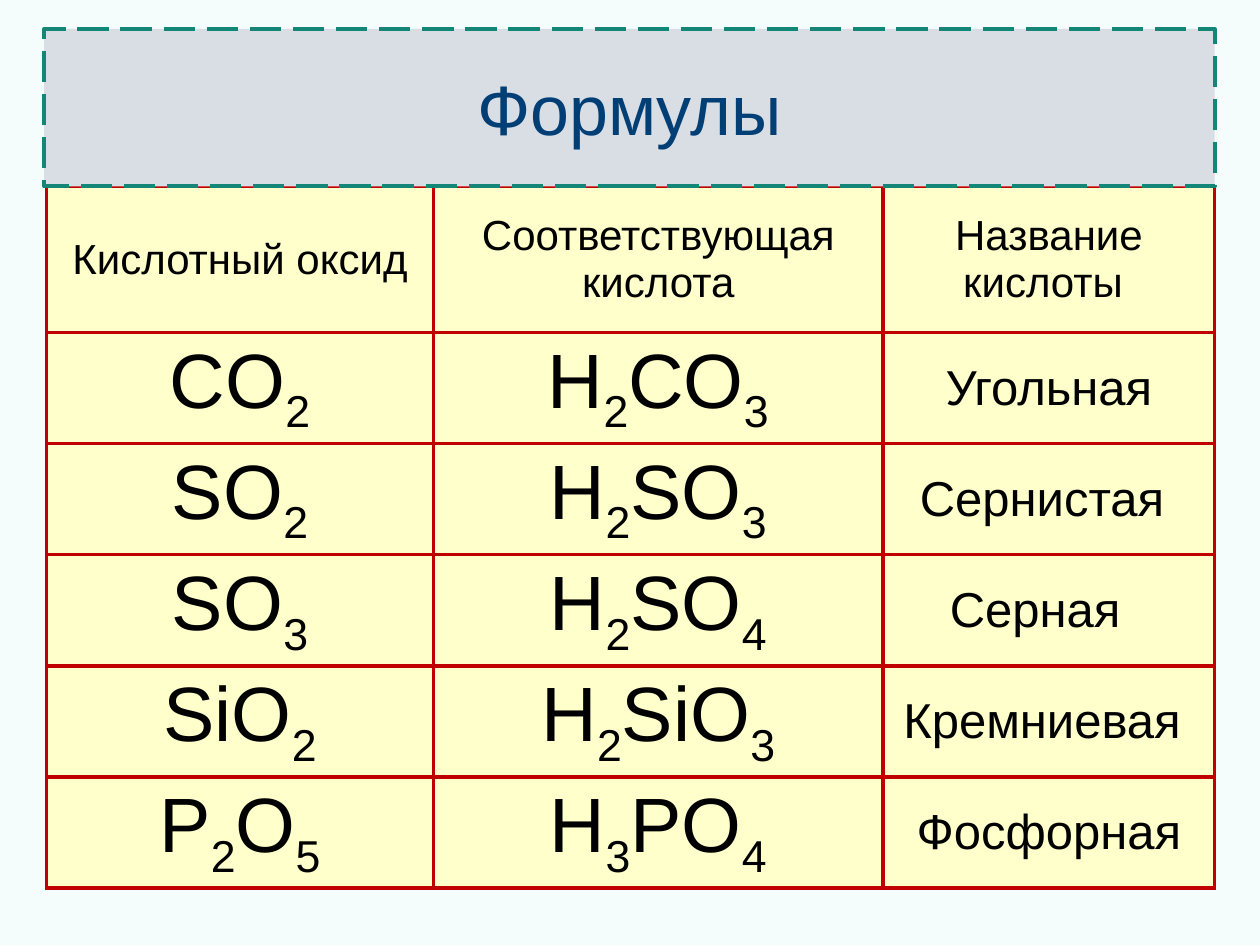
from itertools import groupby

from lxml.etree import SubElement
from pptx import Presentation
from pptx.dml.color import RGBColor
from pptx.enum.dml import MSO_LINE
from pptx.enum.text import MSO_ANCHOR, PP_ALIGN
from pptx.oxml.ns import qn
from pptx.util import Inches, Pt

BACKGROUND = RGBColor(0xF4, 0xFD, 0xFC)
TITLE_FILL = RGBColor(0xD9, 0xDE, 0xE5)
TITLE_LINE = RGBColor(0x13, 0x86, 0x77)
TITLE_TEXT = RGBColor(0x00, 0x3F, 0x75)
CELL_FILL = RGBColor(0xFF, 0xFF, 0xCC)
BORDER = RGBColor(0xC0, 0x00, 0x00)
BLACK = RGBColor(0x00, 0x00, 0x00)

HEADERS = ["Кислотный оксид", "Соответствующая кислота", "Название кислоты "]
ACIDS = [
    ("CO2", "H2CO3", "Угольная", 0),
    ("SO2", "H2SO3", "Сернистая", 0.11),
    ("SO3", "H2SO4", "Серная", 0.22),
    ("SiO2", "H2SiO3", "Кремниевая", 0.11),
    ("P2O5", "H3PO4", "Фосфорная", 0),
]
COLUMN_WIDTHS = [3.07, 3.57, 2.63]
HEADER_HEIGHT = 1.16
ROW_HEIGHT = 0.73


def write_text(text_frame, text, size, color=BLACK, subscripts=False, space_before=None):
    paragraph = text_frame.paragraphs[0]
    paragraph.alignment = PP_ALIGN.CENTER
    if space_before:
        spacing = SubElement(paragraph._p.get_or_add_pPr(), qn("a:spcBef"))
        SubElement(spacing, qn("a:spcPct"), val=str(space_before * 1000))
    pieces = groupby(text, str.isdigit) if subscripts else [(False, text)]
    for lowered, letters in pieces:
        run = paragraph.add_run()
        run.text = "".join(letters)
        run.font.name = "Arial"
        run.font.size = Pt(size)
        run.font.bold = False
        run.font.color.rgb = color
        if lowered:
            run.font._element.set("baseline", "-25000")


def add_borders(cell):
    properties = cell._tc.get_or_add_tcPr()
    for position, side in enumerate(("a:lnL", "a:lnR", "a:lnT", "a:lnB")):
        line = properties.makeelement(qn(side), {"w": str(Pt(2.25))})
        fill = SubElement(line, qn("a:solidFill"))
        SubElement(fill, qn("a:srgbClr"), val=str(BORDER))
        properties.insert(position, line)


def fill_cell(cell, text, size, shift=0, **text_format):
    cell.fill.solid()
    cell.fill.fore_color.rgb = CELL_FILL
    cell.vertical_anchor = MSO_ANCHOR.MIDDLE
    cell.margin_right = Inches(0.1 + shift)
    add_borders(cell)
    write_text(cell.text_frame, text, size, space_before=20, **text_format)


def add_acid_table(slide, left, top, width, height):
    frame = slide.shapes.add_table(len(ACIDS) + 1, len(HEADERS), left, top, width, height)
    table = frame.table
    table.first_row = False
    table.horz_banding = False
    for column, column_width in zip(table.columns, COLUMN_WIDTHS):
        column.width = Inches(column_width)
    for index, row in enumerate(table.rows):
        row.height = Inches(ROW_HEIGHT if index else HEADER_HEIGHT)
    for index, header in enumerate(HEADERS):
        fill_cell(table.cell(0, index), header, 24)
    for index, (oxide, acid, name, shift) in enumerate(ACIDS, start=1):
        fill_cell(table.cell(index, 0), oxide, 44, subscripts=True)
        fill_cell(table.cell(index, 1), acid, 44, subscripts=True)
        fill_cell(table.cell(index, 2), name, 28, shift=shift)


def place_title(slide, left, top, width, height):
    title = slide.shapes.title
    title.left, title.top, title.width, title.height = left, top, width, height
    title.fill.solid()
    title.fill.fore_color.rgb = TITLE_FILL
    title.line.color.rgb = TITLE_LINE
    title.line.width = Pt(2.25)
    title.line.dash_style = MSO_LINE.LONG_DASH
    title.text_frame.vertical_anchor = MSO_ANCHOR.MIDDLE
    write_text(title.text_frame, "Формулы", 40, color=TITLE_TEXT)
    slide.shapes._spTree.append(title._element)


def main():
    presentation = Presentation()
    presentation.slide_width = Inches(10)
    presentation.slide_height = Inches(7.5)
    slide = presentation.slides.add_slide(presentation.slide_layouts[5])
    slide.background.fill.solid()
    slide.background.fill.fore_color.rgb = BACKGROUND
    add_acid_table(slide, Inches(0.37), Inches(1.48), Inches(9.27), Inches(5.33))
    place_title(slide, Inches(0.35), Inches(0.23), Inches(9.29), Inches(1.25))
    presentation.save("out.pptx")


if __name__ == "__main__":
    main()
